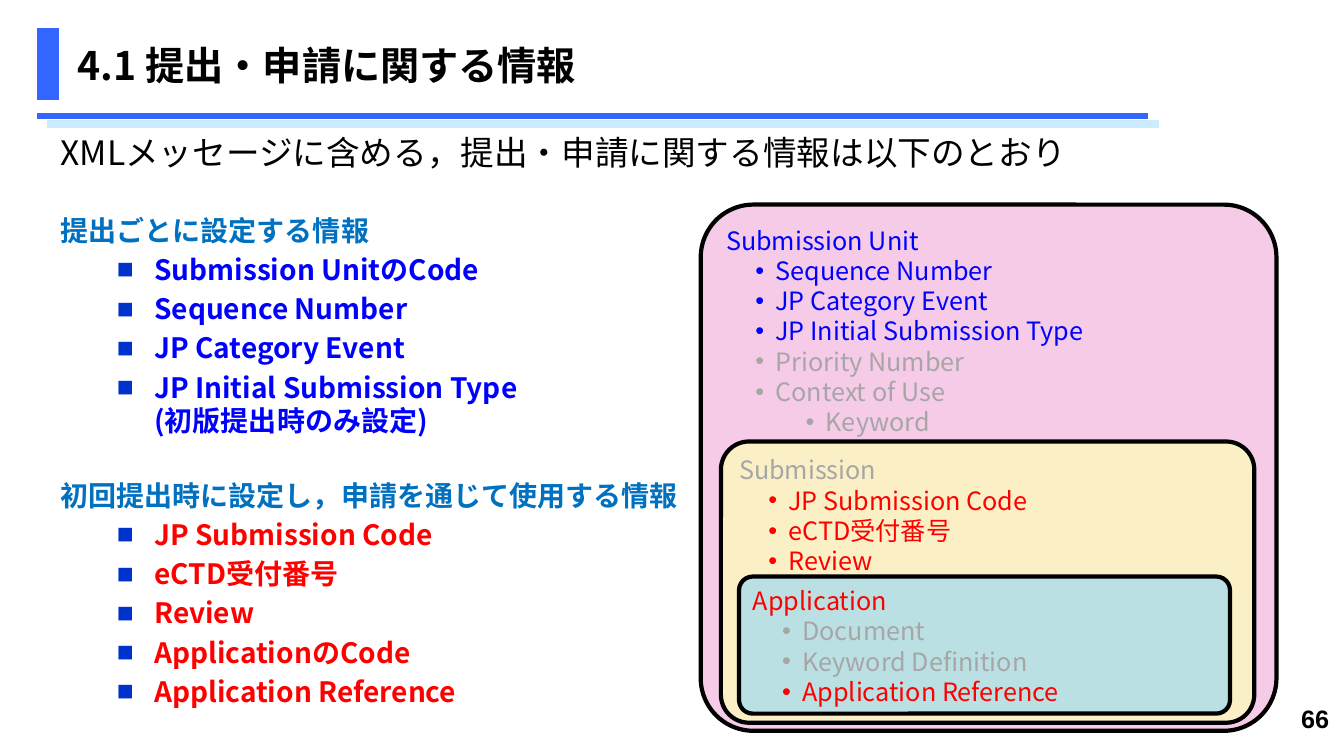
from lxml import etree
from pptx import Presentation
from pptx.dml.color import RGBColor
from pptx.enum.shapes import MSO_CONNECTOR as Connector, MSO_SHAPE as Shape
from pptx.enum.text import MSO_ANCHOR as Anchor, MSO_AUTO_SIZE as AutoSize, PP_ALIGN as Align
from pptx.oxml.ns import qn
from pptx.util import Inches, Pt

COLORS = {
    "black": "000000", "bar": "3366FF", "pale": "CCECFF", "heading": "0070C0",
    "blue": "0000FF", "red": "FF0000", "gray": "A6A6A6", "square": "0033CC",
    "pink": "F5CBE8", "cream": "FBEFC5", "teal": "BBE0E3",
}
FONT = "Noto Sans CJK JP"
LINE_FACTOR = 1.2  # line height relative to text size

# Text sizes and gaps in points
TITLE_SIZE, LEAD_SIZE, LIST_SIZE, BOX_SIZE = 28, 24, 20, 18
ITEM_GAP, GROUP_GAP = 4, 29.2

# Indents in inches
ITEM_INDENT, ITEM_HANGING = 0.93, 0.37
BOX_INDENTS = [0, 0.49, 0.99]
BOX_HANGING = 0.2

# Left list: heading, item colour, items
GROUPS = [
    ("提出ごとに設定する情報", "blue",
     ["Submission UnitのCode", "Sequence Number", "JP Category Event",
      "JP Initial Submission Type\n(初版提出時のみ設定)"]),
    ("初回提出時に設定し，申請を通じて使用する情報", "red",
     ["JP Submission Code", "eCTD受付番号", "Review", "ApplicationのCode",
      "Application Reference"]),
]

# Nested boxes, outermost first: position, fill, lines of (text, colour, level)
BOXES = [
    ((6.95, 2.03, 5.71, 5.22), "pink",
     [("Submission Unit", "blue", 0), ("Sequence Number", "blue", 1),
      ("JP Category Event", "blue", 1), ("JP Initial Submission Type", "blue", 1),
      ("Priority Number", "gray", 1), ("Context of Use", "gray", 1),
      ("Keyword", "gray", 2)]),
    ((7.15, 4.38, 5.29, 2.79), "cream",
     [("Submission", "gray", 0), ("JP Submission Code", "red", 1),
      ("eCTD受付番号", "red", 1), ("Review", "red", 1)]),
    ((7.33, 5.72, 4.87, 1.36), "teal",
     [("Application", "red", 0), ("Document", "gray", 1),
      ("Keyword Definition", "gray", 1), ("Application Reference", "red", 1)]),
]


def color(name):
    return RGBColor.from_string(COLORS[name])


def write(para, text, size, ink, bold=False, font=FONT, align=Align.LEFT):
    para.text = text
    para.alignment = align
    for span in para.runs:
        span.font.name = font
        span.font.size = Pt(size)
        span.font.bold = bold
        span.font.color.rgb = color(ink)
        east_asian = etree.Element(qn("a:ea"), typeface=font)
        span.font._element.find(qn("a:latin")).addnext(east_asian)


def add_line(frame, text, size, ink, bold=False, level=0, before=0):
    """Write into the empty first paragraph, or append a new one."""
    first = frame.paragraphs[0]
    para = frame.add_paragraph() if first.runs else first
    write(para, text, size, ink, bold)
    para.level = level
    para.line_spacing = Pt(size * LINE_FACTOR)
    para.space_before = Pt(before)
    para.space_after = Pt(0)
    return para


def set_indent(para, indent, hanging):
    props = para._p.get_or_add_pPr()
    props.set("marL", str(Inches(indent)))
    props.set("indent", str(-Inches(hanging)))
    return props


def remove_bullet(para):
    props = set_indent(para, 0, 0)
    etree.SubElement(props, qn("a:buNone"))


def add_bullet(para, mark, ink, indent, hanging):
    props = set_indent(para, indent, hanging)
    tint = etree.SubElement(props, qn("a:buClr"))
    etree.SubElement(tint, qn("a:srgbClr"), val=COLORS[ink])
    etree.SubElement(props, qn("a:buFont"), typeface="Arial")
    etree.SubElement(props, qn("a:buChar"), char=mark)


def add_rule(page, left, right, y, ink, weight):
    rule = page.shapes.add_connector(
        Connector.STRAIGHT, Inches(left), Inches(y), Inches(right), Inches(y))
    rule.line.color.rgb = color(ink)
    rule.line.width = Pt(weight)
    etree.SubElement(rule._element.spPr, qn("a:effectLst"))


def add_block(page, kind, at, fill, outline, weight):
    block = page.shapes.add_shape(kind, *map(Inches, at))
    block.shadow.inherit = False
    block.fill.solid()
    block.fill.fore_color.rgb = color(fill)
    block.line.color.rgb = color(outline)
    block.line.width = Pt(weight)
    return block


def add_nested_box(page, at, fill, lines):
    box = add_block(page, Shape.ROUNDED_RECTANGLE, at, fill, "black", 3)
    box.adjustments[0] = 0.1
    frame = box.text_frame
    frame.word_wrap = False
    frame.vertical_anchor = Anchor.TOP
    frame.margin_top = Inches(0.05)
    for text, ink, level in lines:
        para = add_line(frame, text, BOX_SIZE, ink, level=level)
        if level > 0:
            add_bullet(para, "•", ink, BOX_INDENTS[level], BOX_HANGING)


def prepare_placeholder(holder, at, anchor):
    holder.left, holder.top, holder.width, holder.height = map(Inches, at)
    frame = holder.text_frame
    frame.auto_size = AutoSize.NONE
    frame.vertical_anchor = anchor
    return frame


def fill_title(title):
    frame = prepare_placeholder(title, (0.67, 0.21, 12, 0.87), Anchor.MIDDLE)
    write(frame.paragraphs[0], "4.1 提出・申請に関する情報", TITLE_SIZE, "black", bold=True)


def fill_body(body):
    frame = prepare_placeholder(body, (0.5, 1.26, 12.78, 5.75), Anchor.TOP)
    lead = "XMLメッセージに含める，提出・申請に関する情報は以下のとおり"
    remove_bullet(add_line(frame, lead, LEAD_SIZE, "black"))
    for heading, ink, items in GROUPS:
        remove_bullet(add_line(frame, heading, LIST_SIZE, "heading", bold=True,
                               before=GROUP_GAP))
        for item in items:
            para = add_line(frame, item, LIST_SIZE, ink, bold=True, level=1,
                            before=ITEM_GAP)
            add_bullet(para, "■", "square", ITEM_INDENT, ITEM_HANGING)


def add_page_number(page):
    box = page.shapes.add_textbox(*map(Inches, (12, 6.93, 1.28, 0.52)))
    box.text_frame.word_wrap = True
    write(box.text_frame.paragraphs[0], "66", 18, "black", bold=True,
          font="Arial", align=Align.RIGHT)


def main():
    deck = Presentation()
    deck.slide_width, deck.slide_height = Inches(13.33), Inches(7.5)
    page = deck.slides.add_slide(deck.slide_layouts[1])

    # Title and list
    fill_title(page.shapes.title)
    fill_body(page.placeholders[1])

    # Header decoration
    add_rule(page, 0.37, 11.39, 1.15, "bar", 4.5)
    add_block(page, Shape.RECTANGLE, (0.37, 0.28, 0.21, 0.71), "bar", "bar", 0.75)
    add_rule(page, 0.47, 11.5, 1.23, "pale", 6)

    # Nested message structure
    for at, fill, lines in BOXES:
        add_nested_box(page, at, fill, lines)

    # Page number
    add_page_number(page)
    deck.save("out.pptx")


if __name__ == "__main__":
    main()
